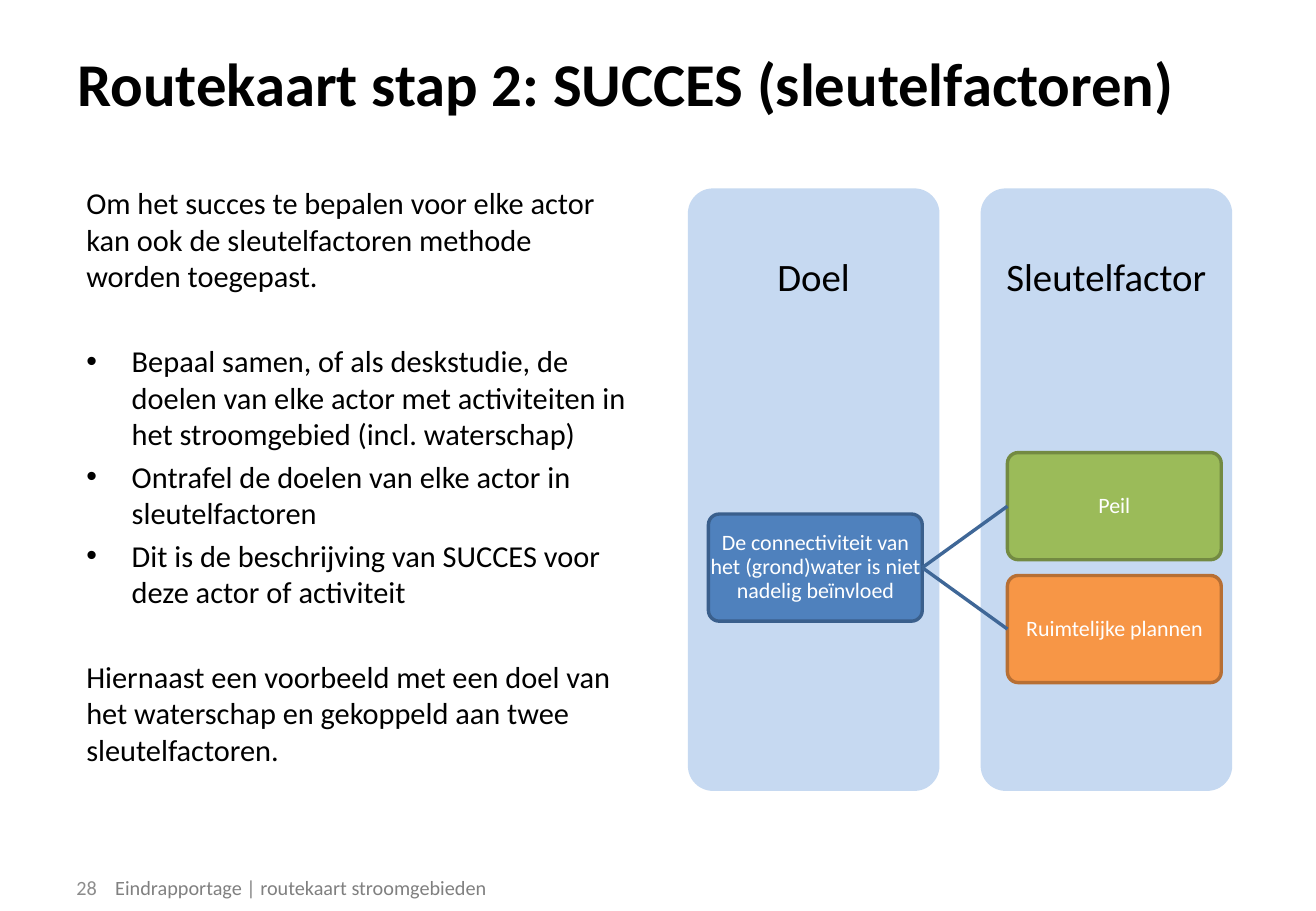
from lxml import etree
from pptx import Presentation
from pptx.dml.color import RGBColor
from pptx.enum.shapes import MSO_CONNECTOR, MSO_SHAPE
from pptx.enum.text import MSO_ANCHOR, MSO_AUTO_SIZE, PP_ALIGN
from pptx.oxml.ns import qn
from pptx.util import Cm, Pt

FONT = "Calibri"
BLACK = RGBColor(0x00, 0x00, 0x00)
WHITE = RGBColor(0xFF, 0xFF, 0xFF)
FOOTER_GREY = RGBColor(0x80, 0x80, 0x80)
NUMBER_GREY = RGBColor(0x8C, 0x8C, 0x8C)
PANEL_BLUE = RGBColor(0xC6, 0xD9, 0xF1)
GOAL_FILL, GOAL_LINE = RGBColor(0x4F, 0x81, 0xBD), RGBColor(0x3A, 0x5F, 0x8C)
LINK_BLUE = RGBColor(0x3F, 0x67, 0x97)
GREEN_FILL, GREEN_LINE = RGBColor(0x9B, 0xBB, 0x59), RGBColor(0x73, 0x8A, 0x42)
ORANGE_FILL, ORANGE_LINE = RGBColor(0xF7, 0x96, 0x46), RGBColor(0xB7, 0x6F, 0x34)

PANELS = ["Doel", "Sleutelfactor"]
GOAL = "De connectiviteit van het (grond)water is niet nadelig beïnvloed"
FACTORS = [
    ("Peil", GREEN_FILL, GREEN_LINE),
    ("Ruimtelijke plannen", ORANGE_FILL, ORANGE_LINE),
]
BODY = [
    ("Om het succes te bepalen voor elke actor kan ook de sleutelfactoren methode "
     "worden toegepast.", False, 0),
    ("Bepaal samen, of als deskstudie, de doelen van elke actor met activiteiten in "
     "het stroomgebied (incl. waterschap)", True, 28.8),
    ("Ontrafel de doelen van elke actor in sleutelfactoren", True, 3.6),
    ("Dit is de beschrijving van SUCCES voor deze actor of activiteit", True, 3.6),
    ("Hiernaast een voorbeeld met een doel van het waterschap en gekoppeld aan twee "
     "sleutelfactoren.", False, 28.8),
]


def place(sp, left, top, width, height):
    """Move a shape to a box given in centimetres."""
    sp.left, sp.top, sp.width, sp.height = Cm(left), Cm(top), Cm(width), Cm(height)


def style(p, size, color, bold=False):
    """Set the font of every run in a paragraph."""
    for r in p.runs:
        r.font.name, r.font.size, r.font.bold = FONT, Pt(size), bold
        r.font.color.rgb = color


def set_bullet(p, bulleted):
    """Give a paragraph a hanging bullet or none."""
    pPr = p._p.get_or_add_pPr()
    indent = Cm(0.95) if bulleted else 0
    pPr.set("marL", str(indent))
    pPr.set("indent", str(-indent))
    if bulleted:
        etree.SubElement(pPr, qn("a:buChar")).set("char", "•")
    else:
        etree.SubElement(pPr, qn("a:buNone"))


def add_title(s, left, top, width, height):
    """Fill the title placeholder."""
    place(s.shapes.title, left, top, width, height)
    tf = s.shapes.title.text_frame
    tf.text = "Routekaart stap 2: SUCCES (sleutelfactoren)"
    tf.auto_size = MSO_AUTO_SIZE.NONE
    tf.vertical_anchor = MSO_ANCHOR.MIDDLE
    tf.paragraphs[0].alignment = PP_ALIGN.LEFT
    style(tf.paragraphs[0], 36, BLACK, True)


def add_body(s, left, top, width, height):
    """Fill the body placeholder with text and bullets."""
    sp = s.placeholders[1]
    place(sp, left, top, width, height)
    tf = sp.text_frame
    tf.text = "\n".join(text for text, _, _ in BODY)
    tf.auto_size = MSO_AUTO_SIZE.NONE
    for p, (_, bulleted, before) in zip(tf.paragraphs, BODY):
        p.space_before = Pt(before)
        set_bullet(p, bulleted)
        style(p, 18, BLACK)


def add_text(s, text, size, color, *box):
    """Add a vertically centred text box."""
    sp = s.shapes.add_textbox(0, 0, 0, 0)
    place(sp, *box)
    tf = sp.text_frame
    tf.text = text
    tf.word_wrap = True
    tf.vertical_anchor = MSO_ANCHOR.MIDDLE
    style(tf.paragraphs[0], size, color)
    return tf


def add_label(s, text, size, color, margin, *box):
    """Add a centred label with equal margins."""
    tf = add_text(s, text, size, color, *box)
    tf.margin_left = tf.margin_right = tf.margin_top = tf.margin_bottom = Cm(margin)
    tf.paragraphs[0].alignment = PP_ALIGN.CENTER
    tf.paragraphs[0].line_spacing = 0.9


def add_rounded(s, fill, line, *box):
    """Add a rounded rectangle, outlined when a line colour is given."""
    sp = s.shapes.add_shape(MSO_SHAPE.ROUNDED_RECTANGLE, 0, 0, 0, 0)
    place(sp, *box)
    sp.adjustments[0] = 0.1
    sp.shadow.inherit = False
    sp.fill.solid()
    sp.fill.fore_color.rgb = fill
    if line is None:
        sp.line.fill.background()
    else:
        sp.line.color.rgb = line
        sp.line.width = Pt(2)
    return sp


def add_card(s, text, fill, line, *box):
    """Add an outlined card with its label."""
    sp = add_rounded(s, fill, line, *box)
    add_label(s, text, 13, WHITE, 0.03, *box)
    return sp


def add_link(s, start, end):
    """Join the right side of one card to the left side of another."""
    link = s.shapes.add_connector(MSO_CONNECTOR.STRAIGHT, 0, 0, 0, 0)
    link.begin_connect(start, 3)
    link.end_connect(end, 1)
    link.line.color.rgb = LINK_BLUE
    link.line.width = Pt(2)
    etree.SubElement(link._element.spPr, qn("a:effectLst"))


def add_diagram(s, left, top, width, height):
    """Draw the two panels and the goal linked to its key factors."""
    panel_w, header_h = 5.26, 0.3 * height
    card_w, card_h, card_step = 4.47, 2.24, 2.57
    for i, heading in enumerate(PANELS):
        x = left + i * (width - panel_w)
        add_rounded(s, PANEL_BLUE, None, x, top, panel_w, height)
        add_label(s, heading, 23, BLACK, 0.45, x, top, panel_w, header_h)

    goal_x, goal_y = left + 0.43, top + 6.81
    goal = add_card(s, GOAL, GOAL_FILL, GOAL_LINE, goal_x, goal_y, card_w, card_h)
    first_y = goal_y - card_step * (len(FACTORS) - 1) / 2
    for i, (text, fill, line) in enumerate(FACTORS):
        factor = add_card(s, text, fill, line, goal_x + 6.25,
                          first_y + i * card_step, card_w, card_h)
        add_link(s, goal, factor)


def add_footer(s, left, top, width, height):
    """Write the page number and the report name."""
    add_text(s, "28", 12, NUMBER_GREY, left, top, 1.2, height)
    add_text(s, "Eindrapportage | routekaart stroomgebieden", 12, FOOTER_GREY,
             left + 0.81, top, width - 0.81, height)


def main():
    """Build and save the slide."""
    prs = Presentation()
    prs.slide_width, prs.slide_height = Cm(27.51), Cm(19.05)
    s = prs.slides.add_slide(prs.slide_layouts[1])
    add_title(s, 1.37, 0.13, 24.77, 3.18)
    add_body(s, 1.55, 3.73, 11.81, 12.8)
    add_diagram(s, 14.38, 3.94, 11.38, 12.6)
    add_footer(s, 1.35, 18.05, 10.8, 1)
    prs.save("out.pptx")


if __name__ == "__main__":
    main()
